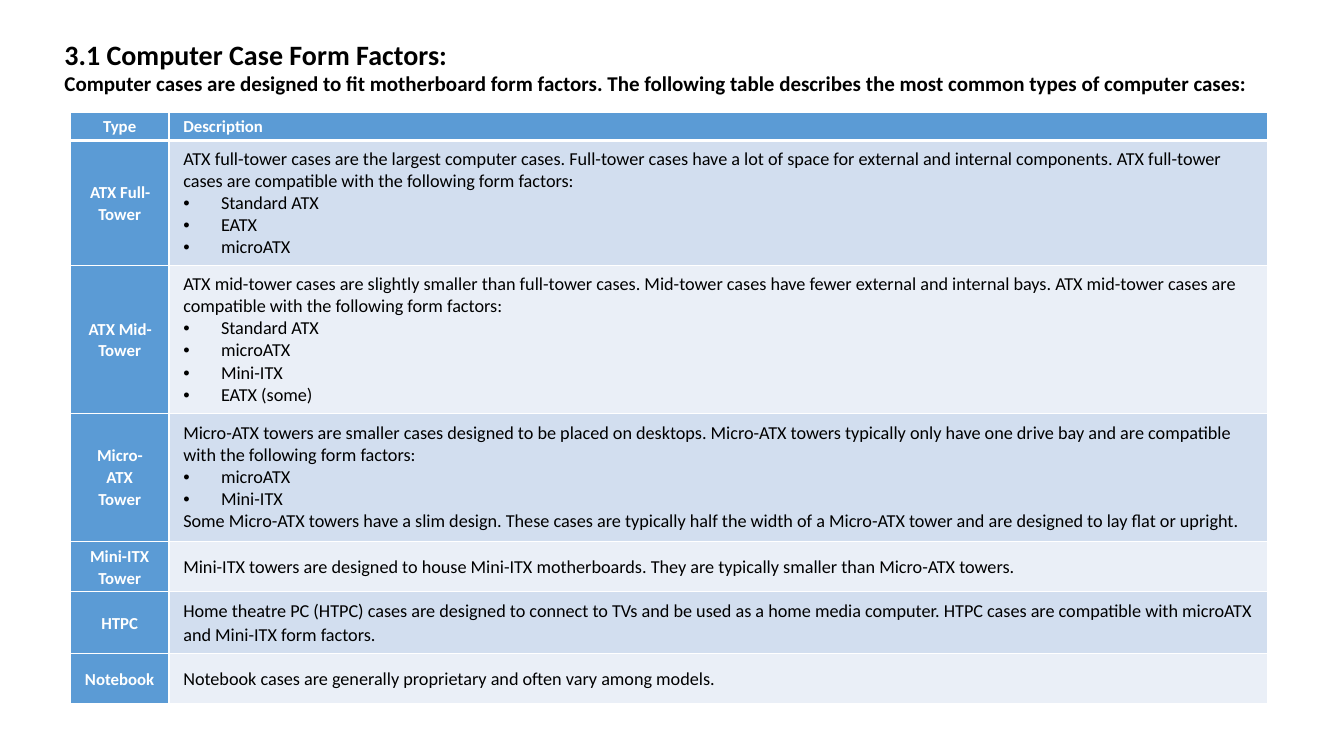
from dataclasses import dataclass

from lxml import etree
from pptx import Presentation
from pptx import util as u
from pptx.dml import color
from pptx.enum import text
from pptx.oxml import ns

HUES = {"head": "5B9BD5", "dark": "D2DEEF", "light": "EAEFF7",
        "white": "FFFFFF", "black": "000000"}


@dataclass
class Case:
    name: str
    high: float
    intro: str
    forms: tuple[str, ...] = ()
    tail: str = ""


@dataclass
class Look:
    size: float
    bold: bool
    hue: str
    align: text.PP_ALIGN = text.PP_ALIGN.LEFT
    space: float = 1.0


CASES = [
    Case("ATX Full-Tower", 3.1,
         "ATX full-tower cases are the largest computer cases. Full-tower cases have a lot of "
         "space for external and internal components. ATX full-tower cases are compatible with "
         "the following form factors:",
         ("Standard ATX", "EATX", "microATX")),
    Case("ATX Mid-Tower", 3.7,
         "ATX mid-tower cases are slightly smaller than full-tower cases. Mid-tower cases have "
         "fewer external and internal bays. ATX mid-tower cases are compatible with the "
         "following form factors:",
         ("Standard ATX", "microATX", "Mini-ITX", "EATX (some)")),
    Case("Micro-ATX Tower", 3.23,
         "Micro-ATX towers are smaller cases designed to be placed on desktops. Micro-ATX towers "
         "typically only have one drive bay and are compatible with the following form factors:",
         ("microATX", "Mini-ITX"),
         "Some Micro-ATX towers have a slim design. These cases are typically half the width of "
         "a Micro-ATX tower and are designed to lay flat or upright."),
    Case("Mini-ITX Tower", 1.27,
         "Mini-ITX towers are designed to house Mini-ITX motherboards. They are typically "
         "smaller than Micro-ATX towers."),
    Case("HTPC", 1.53,
         "Home theatre PC (HTPC) cases are designed to connect to TVs and be used as a home "
         "media computer. HTPC cases are compatible with microATX and Mini-ITX form factors."),
    Case("Notebook", 1.27,
         "Notebook cases are generally proprietary and often vary among models."),
]


def apply(item, values: dict) -> None:
    for key, value in values.items():
        setattr(item, key, value)


def write(para, words: str, look: Look) -> None:
    apply(para, {"alignment": look.align, "line_spacing": look.space,
                 "space_before": u.Pt(0), "space_after": u.Pt(0)})
    run = para.add_run()
    run.text = words
    apply(run.font, {"name": "Calibri", "size": u.Pt(look.size), "bold": look.bold})
    run.font.color.rgb = color.RGBColor.from_string(HUES[look.hue])


def bullet(para) -> None:
    props = para._p.get_or_add_pPr()
    props.set("marL", str(u.Cm(0.95)))
    props.set("indent", str(u.Cm(-0.95)))
    etree.SubElement(props, ns.qn("a:buFont"), typeface="Arial")
    etree.SubElement(props, ns.qn("a:buChar"), char="•")


def border(cell, widths: dict[str, float]) -> None:
    props = cell._tc.get_or_add_tcPr()
    for place, (side, width) in enumerate(widths.items()):
        line = etree.Element(ns.qn(f"a:ln{side}"), w=str(u.Pt(width)))
        fill = etree.SubElement(line, ns.qn("a:solidFill"))
        etree.SubElement(fill, ns.qn("a:srgbClr"), val=HUES["white"])
        props.insert(place, line)


def style(cell, hue: str, pad: float, top: float = 1, base: float = 1) -> None:
    apply(cell, {"vertical_anchor": text.MSO_ANCHOR.MIDDLE,
                 "margin_left": u.Cm(0.36), "margin_right": u.Cm(0.36),
                 "margin_top": u.Cm(pad), "margin_bottom": u.Cm(pad)})
    cell.fill.solid()
    cell.fill.fore_color.rgb = color.RGBColor.from_string(HUES[hue])
    border(cell, {"L": 1, "R": 1, "T": top, "B": base})


def describe(cell, case: Case) -> None:
    look = Look(13, False, "black", space=1.0 if case.forms else 1.07)
    frame = cell.text_frame
    write(frame.paragraphs[0], case.intro, look)
    for form in case.forms:
        para = frame.add_paragraph()
        bullet(para)
        write(para, form, look)
    if case.tail:
        write(frame.add_paragraph(), case.tail, look)


def draw_title(slide) -> None:
    title = slide.shapes.title
    apply(title, {"left": u.Cm(1.37), "top": u.Cm(0.81),
                  "width": u.Cm(31.29), "height": u.Cm(1.75)})
    frame = title.text_frame
    apply(frame, {"word_wrap": True, "auto_size": text.MSO_AUTO_SIZE.NONE,
                  "vertical_anchor": text.MSO_ANCHOR.TOP})
    write(frame.paragraphs[0], "3.1 Computer Case Form Factors:", Look(20, True, "black"))
    write(frame.add_paragraph(),
          "Computer cases are designed to fit motherboard form factors. The following table "
          "describes the most common types of computer cases:", Look(15, True, "black"))


def draw_table(slide) -> None:
    highs = [0.71] + [case.high for case in CASES]
    widths = [2.49, 27.69]
    grid = slide.shapes.add_table(len(highs), len(widths), u.Cm(1.77), u.Cm(2.83),
                                  u.Cm(sum(widths)), u.Cm(sum(highs))).table
    for col, width in zip(grid.columns, widths):
        col.width = u.Cm(width)
    for row, high in zip(grid.rows, highs):
        row.height = u.Cm(high)

    label = Look(12, True, "white", text.PP_ALIGN.CENTER, 1.07)
    heads = {"Type": label, "Description": Look(12, True, "white", space=1.07)}
    for cell, (words, look) in zip(grid.rows[0].cells, heads.items()):
        style(cell, "head", 0.08, base=3)
        write(cell.text_frame.paragraphs[0], words, look)

    for num, case in enumerate(CASES, 1):
        name, about = grid.rows[num].cells
        top = 3 if num == 1 else 1
        style(name, "head", 0.08, top)
        write(name.text_frame.paragraphs[0], case.name, label)
        style(about, "dark" if num % 2 else "light", 0.18, top)
        describe(about, case)


def main() -> None:
    deck = Presentation()
    apply(deck, {"slide_width": u.Cm(33.87), "slide_height": u.Cm(19.05)})
    slide = deck.slides.add_slide(deck.slide_layouts.get_by_name("Title Only"))
    draw_table(slide)
    draw_title(slide)
    deck.save("out.pptx")


if __name__ == "__main__":
    main()
